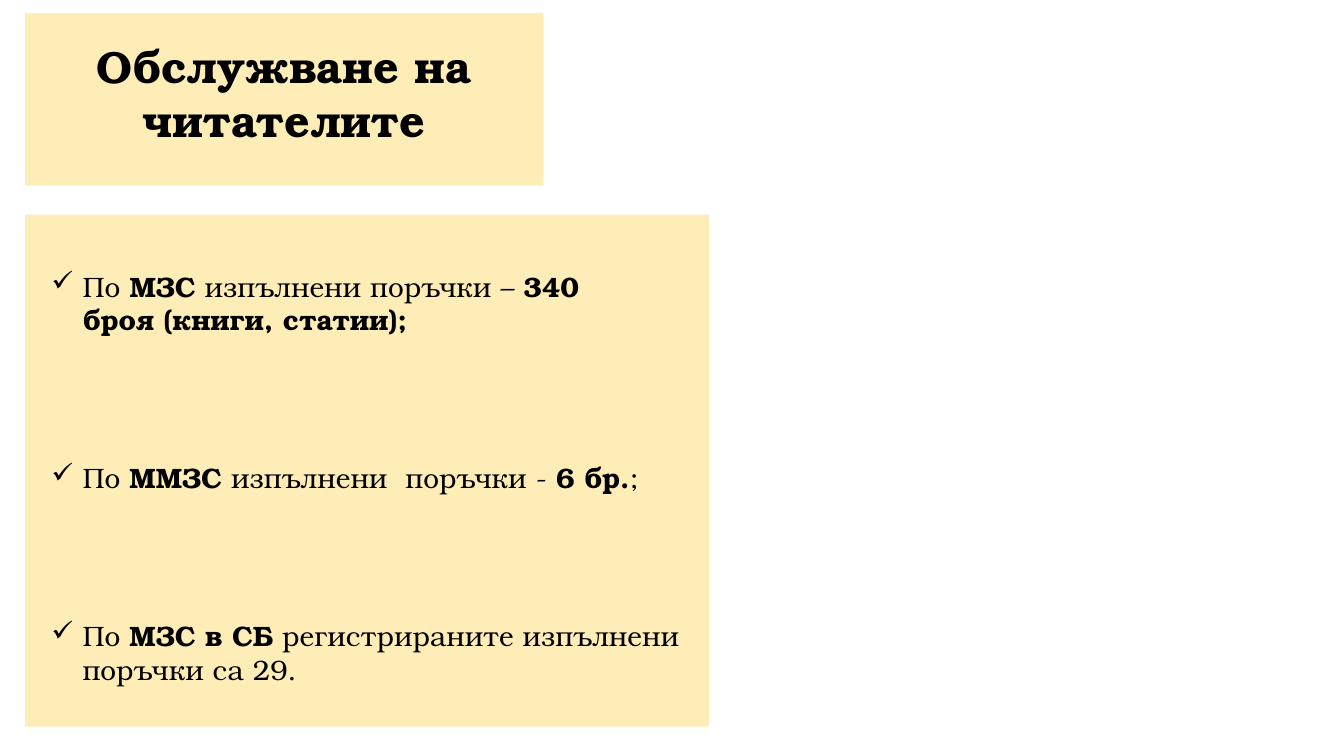
"""Builds the slide on reader services with its interlibrary loan figures."""
import lxml.etree
import pptx
import pptx.dml.color
import pptx.enum.shapes
import pptx.enum.text
import pptx.oxml.ns
import pptx.util

COLORS = {"panel": "FFE699", "text": "000000"}
FONT = "TeX Gyre Bonum"
qn = pptx.oxml.ns.qn

prs = pptx.Presentation()
prs.slide_width = pptx.util.Inches(13.33)
prs.slide_height = pptx.util.Inches(7.5)
col, row = prs.slide_width / 100, prs.slide_height / 100
s = prs.slides.add_slide(prs.slide_layouts[6])


def place(x, y, w, h):
    return int(x * col), int(y * row), int(w * col), int(h * row)


def add_text(box, parts, size):
    tf = s.shapes.add_textbox(*place(*box)).text_frame
    tf.word_wrap = True
    tf.auto_size = pptx.enum.text.MSO_AUTO_SIZE.SHAPE_TO_FIT_TEXT
    p = tf.paragraphs[0]
    for text, bold in parts:
        r = p.add_run()
        r.text = text
        r.font.name = FONT
        r.font.size = pptx.util.Pt(size)
        r.font.bold = bold
        r.font.color.rgb = pptx.dml.color.RGBColor.from_string(COLORS["text"])
    return p


panel_left = 1.88
title_width = 38.56
for top, width, height in [(1.73, title_width, 22.8), (28.4, 50.86, 67.73)]:
    sp = s.shapes.add_shape(pptx.enum.shapes.MSO_SHAPE.RECTANGLE, *place(panel_left, top, width, height))
    sp.shadow.inherit = False
    sp.fill.solid()
    sp.fill.fore_color.rgb = pptx.dml.color.RGBColor.from_string(COLORS["panel"])
    sp.line.fill.background()
    color = sp.fill._xPr.find(qn("a:solidFill")).find(qn("a:srgbClr"))
    lxml.etree.SubElement(color, qn("a:alpha"), val="70000")

title = add_text((panel_left, 4.53, title_width, 16), [("Обслужване на читателите", True)], 32)
title.alignment = pptx.enum.text.PP_ALIGN.CENTER

one_line, two_lines = 5.87, 10.27
orders = [
    (34.93, 44.56, two_lines, [("По ", False), ("МЗС", True), (" изпълнени поръчки – ", False),
                               ("340 броя (книги, статии);", True)]),
    (60.27, 45.76, one_line, [("По ", False), ("ММЗС", True), (" изпълнени  поръчки - ", False),
                              ("6 бр.", True), (";", False)]),
    (81.2, 48.46, two_lines, [("По ", False), ("МЗС в СБ", True),
                              (" регистрираните изпълнени поръчки са 29.", False)]),
]
indent = pptx.util.Inches(0.31)
for top, width, height, parts in orders:
    p = add_text((3.08, top, width, height), parts, 20)
    pPr = p._p.get_or_add_pPr()
    pPr.set("marL", str(indent))
    pPr.set("indent", str(-indent))
    lxml.etree.SubElement(pPr, qn("a:buChar"), char="✓")

prs.save("out.pptx")
